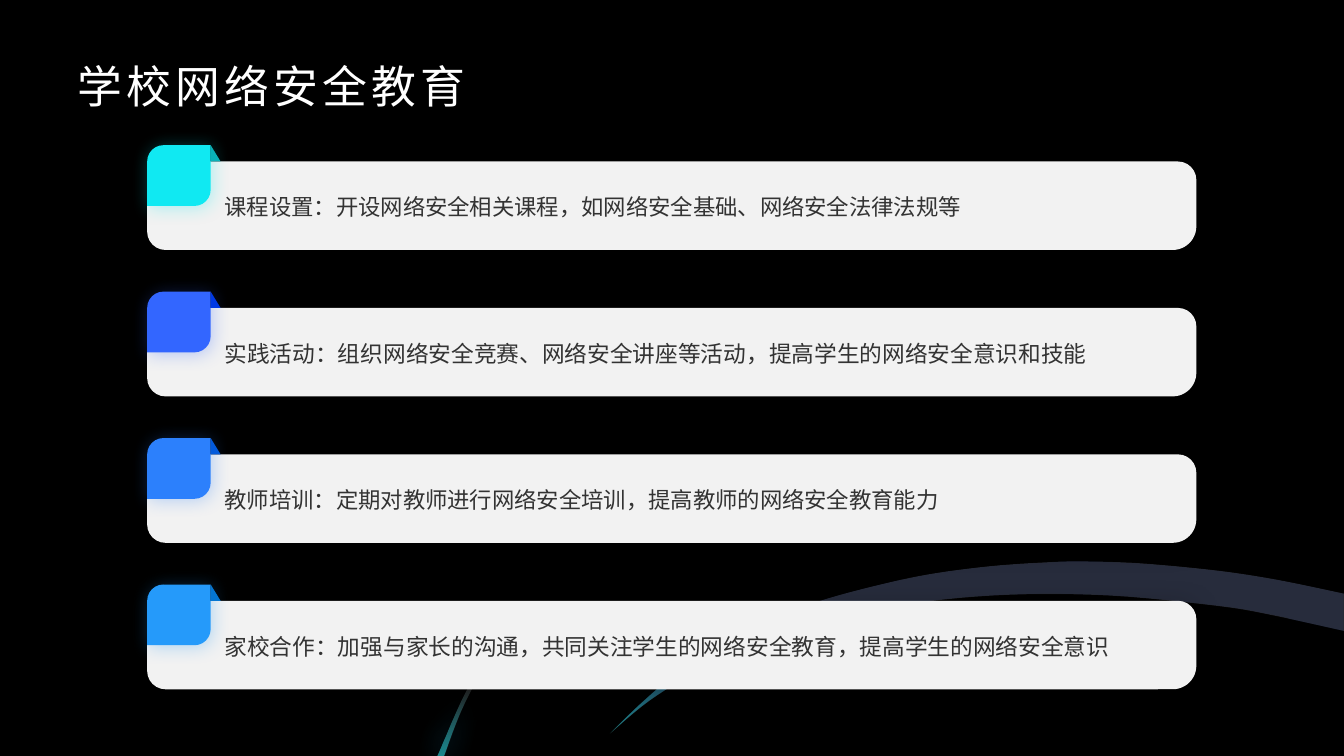
from typing import NamedTuple

from lxml import etree
from pptx import Presentation
from pptx.dml.color import RGBColor
from pptx.enum import shapes as kinds, text as txt
from pptx.oxml import ns
from pptx.util import Cm, Pt

BLACK = RGBColor(0x00, 0x00, 0x00)
WHITE = RGBColor(0xFF, 0xFF, 0xFF)
CARD_GREY = RGBColor(0xF2, 0xF2, 0xF2)
TEXT_GREY = RGBColor(0x33, 0x33, 0x33)
ARC_GREY = RGBColor(0x26, 0x26, 0x26)
CYAN = RGBColor(0x10, 0xE9, 0xF2)
DARK_CYAN = RGBColor(0x0A, 0xB1, 0xB8)
INDIGO = RGBColor(0x33, 0x66, 0xFF)
DARK_INDIGO = RGBColor(0x00, 0x39, 0xE5)
BLUE = RGBColor(0x2C, 0x80, 0xFC)
DARK_BLUE = RGBColor(0x03, 0x5A, 0xDB)
SKY = RGBColor(0x25, 0x9A, 0xFA)
DARK_SKY = RGBColor(0x05, 0x76, 0xD2)
GLOW = RGBColor(0x1E, 0xB5, 0xF7)

Point = tuple[float, float]


class Shadow(NamedTuple):
    color: RGBColor
    alpha: int
    blur: int
    distance: int
    angle: int


class Stop(NamedTuple):
    position: int
    color: RGBColor
    alpha: int


class Arc(NamedTuple):
    edges: list[list[Point]]
    stops: list[Stop]
    angle: int
    shadow: Shadow | None


class Measure(NamedTuple):
    wording: str
    color: RGBColor
    fold: RGBColor
    size: float


# Points in centimetres along the two edges of each arc
ARCS = [
    Arc([[(15.37, 18.49), (16.15, 17.73), (17.02, 16.99), (18.01, 16.33),
          (19.15, 15.75), (20.47, 15.21), (21.87, 14.81), (23.37, 14.48),
          (24.94, 14.27), (26.39, 14.17), (27.36, 14.15), (28.8, 14.2),
          (30.68, 14.38), (32.18, 14.61), (33.87, 14.96)],
         [(33.87, 15.9), (32, 15.49), (30.68, 15.27), (27.99, 15.01),
          (25.4, 14.99), (23.01, 15.21), (20.8, 15.67), (19.1, 16.21),
          (17.63, 16.89), (16.38, 17.65), (15.37, 18.49)]],
        [Stop(0, CYAN, 50), Stop(31, INDIGO, 10)], 315, None),
    Arc([[(11.02, 19.05), (11.07, 18.95), (11.76, 17.4), (12.52, 16.26),
          (13.36, 15.32)],
         [(13.36, 15.32), (12.78, 15.98), (12.17, 16.87), (11.63, 17.91),
          (11.2, 19.05)]],
        [Stop(55, CYAN, 0), Stop(100, CYAN, 50)], 90,
        Shadow(GLOW, 100, 20, 0, 0)),
]

MEASURES = [
    Measure("课程设置：开设网络安全相关课程，如网络安全基础、网络安全法律法规等",
            CYAN, DARK_CYAN, 16),
    Measure("实践活动：组织网络安全竞赛、网络安全讲座等活动，提高学生的网络安全意识和技能",
            INDIGO, DARK_INDIGO, 16.2),
    Measure("教师培训：定期对教师进行网络安全培训，提高教师的网络安全教育能力",
            BLUE, DARK_BLUE, 16),
    Measure("家校合作：加强与家长的沟通，共同关注学生的网络安全教育，提高学生的网络安全意识",
            SKY, DARK_SKY, 16.2),
]
CARD_LEFT, FIRST_TOP, PITCH = 3.71, 4.07, 3.69
TILE_WIDTH, RISE = 1.6, 0.41


def add_color(parent, color: RGBColor, alpha: int) -> None:
    clr = etree.SubElement(parent, ns.qn("a:srgbClr"), val=str(color))
    etree.SubElement(clr, ns.qn("a:alpha"), val=str(alpha * 1000))


def set_shadow(shape, shadow: Shadow | None) -> None:
    shape.shadow.inherit = False
    if shadow:
        effects = shape._element.spPr.find(ns.qn("a:effectLst"))
        outer = etree.SubElement(
            effects, ns.qn("a:outerShdw"), blurRad=str(Pt(shadow.blur)),
            dist=str(Pt(shadow.distance)), dir=str(shadow.angle * 60000),
            algn="ctr", rotWithShape="0")
        add_color(outer, shadow.color, shadow.alpha)


def set_gradient(shape, stops: list[Stop], angle: int) -> None:
    shape.fill.gradient()
    gradient = shape._element.spPr.find(ns.qn("a:gradFill"))
    for child in list(gradient):
        gradient.remove(child)
    stop_list = etree.SubElement(gradient, ns.qn("a:gsLst"))
    for stop in stops:
        mark = etree.SubElement(stop_list, ns.qn("a:gs"), pos=str(stop.position * 1000))
        add_color(mark, stop.color, stop.alpha)
    etree.SubElement(gradient, ns.qn("a:lin"), ang=str(angle * 60000), scaled="0")


def smooth_edge(points: list[Point], steps: int = 6) -> list[Point]:
    """Catmull-Rom curve through the points."""
    padded = [points[0], *points, points[-1]]
    curve = [points[0]]
    for a, b, c, d in zip(padded, padded[1:], padded[2:], padded[3:]):
        for t in (step / steps for step in range(1, steps + 1)):
            x, y = (q + t * (r - p + t * (2 * p - 5 * q + 4 * r - s
                                          + t * (3 * q - p - 3 * r + s))) / 2
                    for p, q, r, s in zip(a, b, c, d))
            curve.append((x, y))
    return curve


def draw_arc(slide, arc: Arc, tinted: bool) -> None:
    outline = [(Cm(x), Cm(y)) for edge in arc.edges for x, y in smooth_edge(edge)]
    builder = slide.shapes.build_freeform(*outline[0])
    builder.add_line_segments(outline[1:], close=True)
    band = builder.convert_to_shape()
    band.line.fill.background()
    set_shadow(band, arc.shadow if tinted else None)
    if tinted:
        set_gradient(band, arc.stops, arc.angle)
    else:
        band.fill.solid()
        band.fill.fore_color.rgb = ARC_GREY


def draw_block(slide, kind, box: tuple[float, float, float, float], color: RGBColor,
               corners: tuple[float, ...] = (), shadow: Shadow | None = None) -> None:
    block = slide.shapes.add_shape(kind, *map(Cm, box))
    for index, corner in enumerate(corners):
        block.adjustments[index] = corner
    block.fill.solid()
    block.fill.fore_color.rgb = color
    block.line.fill.background()
    set_shadow(block, shadow)


def set_frame(frame, anchor, bottom: float) -> None:
    frame.word_wrap = True
    frame.auto_size = txt.MSO_AUTO_SIZE.NONE
    frame.vertical_anchor = anchor
    frame.margin_left = frame.margin_right = Cm(0.25)
    frame.margin_top, frame.margin_bottom = 0, Cm(bottom)


def add_run(paragraph, wording: str, font: str, size: float, color: RGBColor):
    paragraph.alignment = txt.PP_ALIGN.LEFT
    run = paragraph.add_run()
    run.text = wording
    run.font.name, run.font.size = font, Pt(size)
    run.font.color.rgb = color
    return run


def draw_measure(slide, measure: Measure, top: float) -> None:
    diagonal = kinds.MSO_SHAPE.ROUND_2_DIAG_RECTANGLE
    draw_block(slide, diagonal, (CARD_LEFT, top, 26.44, 2.23), CARD_GREY,
               (0.267, 0.208), Shadow(BLACK, 23, 20, 3, 107))
    draw_block(slide, diagonal, (CARD_LEFT, top - RISE, TILE_WIDTH, 1.53), measure.color,
               (0.267, 0), Shadow(measure.color, 31, 13, 2, 45))
    draw_block(slide, kinds.MSO_SHAPE.RIGHT_TRIANGLE,
               (CARD_LEFT + TILE_WIDTH, top - RISE, 0.25, RISE), measure.fold)
    caption = slide.shapes.add_textbox(Cm(5.41), Cm(top + 0.03), Cm(23.88), Cm(2.18))
    set_frame(caption.text_frame, txt.MSO_ANCHOR.MIDDLE, 0.3)
    paragraph = caption.text_frame.paragraphs[0]
    paragraph.line_spacing = 1.5
    add_run(paragraph, measure.wording, "Lato", measure.size, TEXT_GREY)


def main() -> None:
    deck = Presentation()
    deck.slide_width, deck.slide_height = Cm(33.87), Cm(19.05)
    slide = deck.slides.add_slide(deck.slide_layouts[5])
    slide.background.fill.solid()
    slide.background.fill.fore_color.rgb = BLACK

    # Background arcs: grey bases, then tinted layers
    for tinted in (False, True):
        for arc in ARCS:
            draw_arc(slide, arc, tinted)

    # Title
    title = slide.shapes.title
    title.left, title.top, title.width, title.height = map(Cm, (1.7, 1.27, 30.48, 1.57))
    set_frame(title.text_frame, txt.MSO_ANCHOR.BOTTOM, 0)
    heading = add_run(title.text_frame.paragraphs[0], "学校网络安全教育", "Cabin", 32, WHITE)
    heading.font._element.set("spc", "300")

    # Measures
    for row, measure in enumerate(MEASURES):
        draw_measure(slide, measure, FIRST_TOP + row * PITCH)

    deck.save("out.pptx")


if __name__ == "__main__":
    main()
